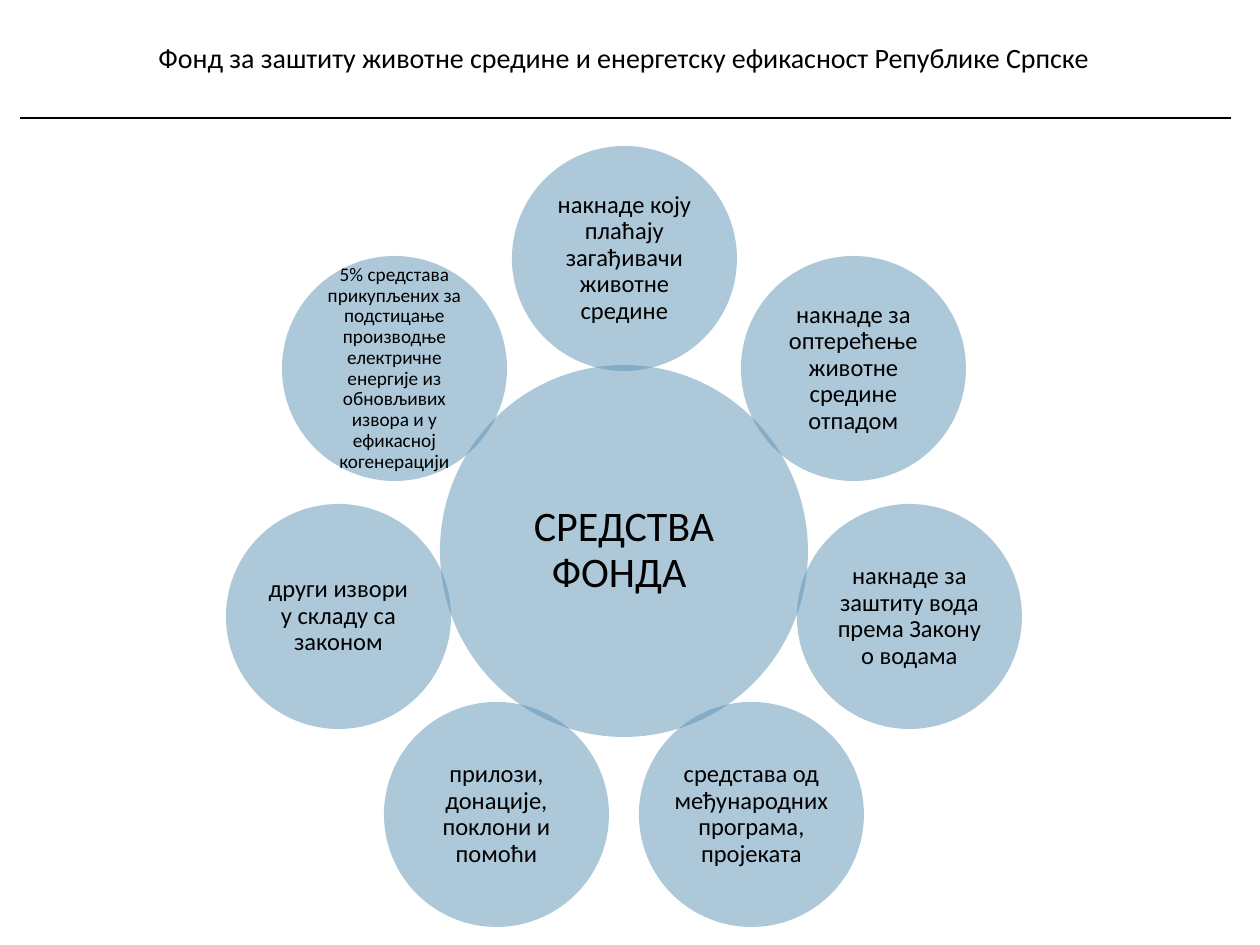
import math
from dataclasses import dataclass

import lxml.etree
import pptx
import pptx.dml.color
import pptx.enum.shapes
import pptx.enum.text
import pptx.oxml.ns
import pptx.util

EMU_PER_PX = 914400 // 126
FONT = "Calibri"
BLACK = "000000"
BLUE = "5C92B5"
CENTER_X, CENTER_Y = 624, 551
RING_RADIUS = 293
SOURCE_SIZE = 225


@dataclass
class Source:
    text: str
    size: int = 14


# Clockwise from the top
SOURCES = [
    Source("накнаде коју плаћају загађивачи животне средине"),
    Source("накнаде за оптерећење животне средине отпадом"),
    Source("накнаде за заштиту вода према Закону о водама"),
    Source("средстава од међународних програма, пројеката"),
    Source("прилози, донације, поклони и помоћи"),
    Source("други извори у складу са законом"),
    Source("5% средстава прикупљених за подстицање производње електричне "
           "енергије из обновљивих извора и у ефикасној когенерацији", 11),
]


def px(length: float) -> pptx.util.Emu:
    return pptx.util.Emu(round(length) * EMU_PER_PX)


def color(value: str) -> pptx.dml.color.RGBColor:
    return pptx.dml.color.RGBColor.from_string(value)


def write_text(box, text: str, *, size: int, anchor, inset: int) -> None:
    frame = box.text_frame
    frame.word_wrap = True
    frame.auto_size = pptx.enum.text.MSO_AUTO_SIZE.NONE
    frame.vertical_anchor = anchor
    frame.margin_left = frame.margin_right = px(inset)
    frame.margin_top = frame.margin_bottom = px(inset)
    para = frame.paragraphs[0]
    para.alignment = pptx.enum.text.PP_ALIGN.CENTER
    para.line_spacing = 0.9
    span = para.add_run()
    span.text = text
    span.font.name = FONT
    span.font.size = pptx.util.Pt(size)
    span.font.color.rgb = color(BLACK)


def add_circle(page, center_x: float, center_y: float, width: int, height: int,
               text: str, *, size: int, inset: int) -> None:
    circle = page.shapes.add_shape(
        pptx.enum.shapes.MSO_SHAPE.OVAL, px(center_x - width / 2),
        px(center_y - height / 2), px(width), px(height))
    circle.shadow.inherit = False
    circle.line.fill.background()
    circle.fill.solid()
    circle.fill.fore_color.rgb = color(BLUE)
    # Half transparent, so that overlaps show darker
    tint = circle.fill._xPr.find(".//" + pptx.oxml.ns.qn("a:srgbClr"))
    lxml.etree.SubElement(tint, pptx.oxml.ns.qn("a:alpha"), val="50000")
    write_text(circle, text, size=size, inset=inset,
               anchor=pptx.enum.text.MSO_ANCHOR.MIDDLE)


def add_rule(page, left: int, right: int, y: int) -> None:
    rule = page.shapes.add_connector(
        pptx.enum.shapes.MSO_CONNECTOR.STRAIGHT, px(left), px(y), px(right), px(y))
    rule.line.color.rgb = color(BLACK)
    rule.line.width = pptx.util.Pt(0.75)
    lxml.etree.SubElement(rule._element.spPr, pptx.oxml.ns.qn("a:effectLst"))


def main() -> None:
    deck = pptx.Presentation()
    deck.slide_width, deck.slide_height = px(1260), px(945)
    page = deck.slides.add_slide(deck.slide_layouts[5])

    # Heading and rule
    title = page.shapes.title
    title.left, title.top, title.width, title.height = px(122), px(38), px(1004), px(49)
    write_text(title, "Фонд за заштиту животне средине и енергетску ефикасност "
               "Републике Српске", size=16, inset=6,
               anchor=pptx.enum.text.MSO_ANCHOR.TOP)
    add_rule(page, 20, 1231, 118)

    # Hub, then the sources evenly spaced around it
    add_circle(page, CENTER_X, CENTER_Y, 368, 372, "СРЕДСТВА ФОНДА ", size=24, inset=4)
    for index, source in enumerate(SOURCES):
        angle = 2 * math.pi * index / len(SOURCES)
        add_circle(page, CENTER_X + RING_RADIUS * math.sin(angle),
                   CENTER_Y - RING_RADIUS * math.cos(angle),
                   SOURCE_SIZE, SOURCE_SIZE, source.text, size=source.size, inset=2)

    deck.save("out.pptx")


if __name__ == "__main__":
    main()
